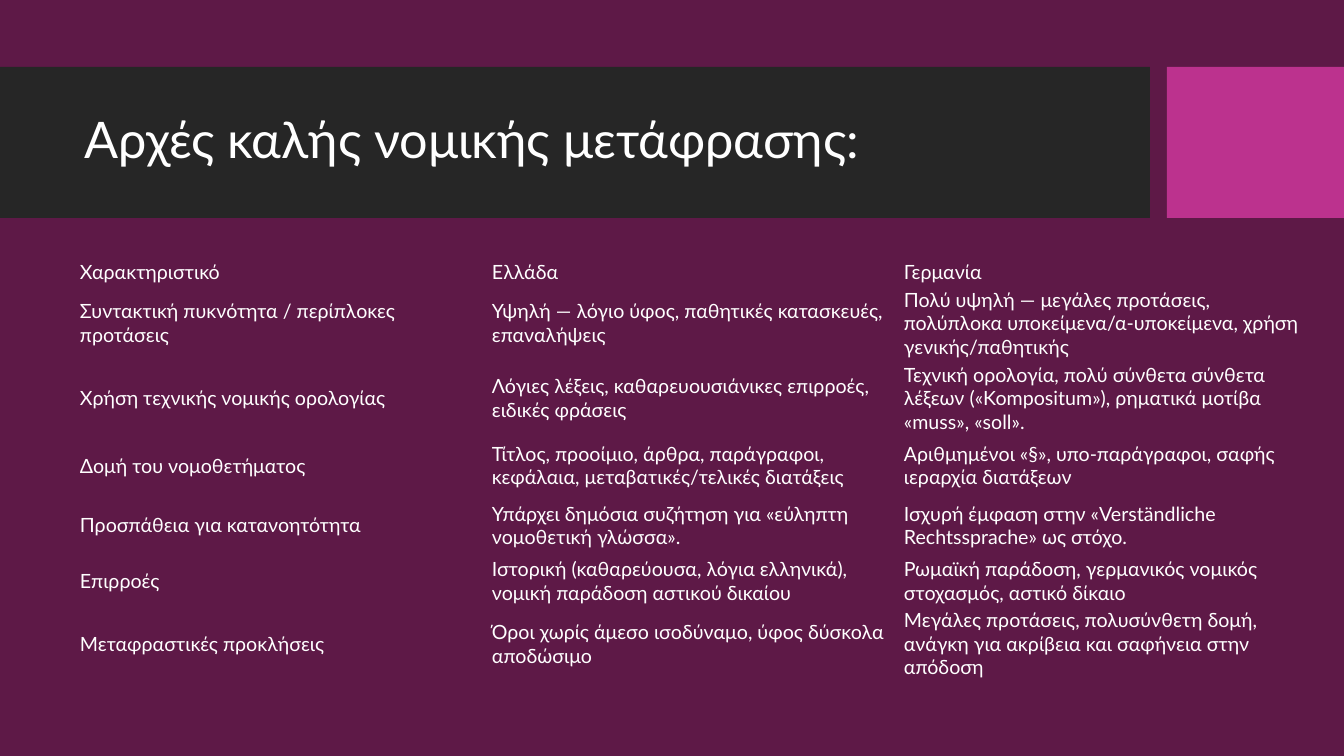
from pptx import Presentation
from pptx import util as u
from pptx.dml.color import RGBColor
from pptx.enum import shapes, text

PX = 914400 / 100.8
PLUM = RGBColor(0x5E, 0x19, 0x47)
CHARCOAL = RGBColor(0x26, 0x26, 0x26)
MAGENTA = RGBColor(0xBC, 0x32, 0x8E)
WHITE = RGBColor(0xFF, 0xFF, 0xFF)
FONT = "Lato"
NO_STYLE_NO_GRID = "{2D5ABB26-0587-4C30-8999-92F81FD0307C}"

COLUMN_WIDTH = 412
ROW_HEIGHTS = [19, 75, 75, 60, 60, 46, 60]
COMPARISON = [
    ("Χαρακτηριστικό", "Ελλάδα", "Γερμανία"),
    ("Συντακτική πυκνότητα / περίπλοκες προτάσεις",
     "Υψηλή — λόγιο ύφος, παθητικές κατασκευές, επαναλήψεις",
     "Πολύ υψηλή — μεγάλες προτάσεις, πολύπλοκα υποκείμενα/α-υποκείμενα, χρήση γενικής/παθητικής"),
    ("Χρήση τεχνικής νομικής ορολογίας",
     "Λόγιες λέξεις, καθαρευουσιάνικες επιρροές, ειδικές φράσεις",
     "Τεχνική ορολογία, πολύ σύνθετα σύνθετα λέξεων («Kompositum»), ρηματικά μοτίβα «muss», «soll»."),
    ("Δομή του νομοθετήματος",
     "Τίτλος, προοίμιο, άρθρα, παράγραφοι, κεφάλαια, μεταβατικές/τελικές διατάξεις",
     "Αριθμημένοι «§», υπο-παράγραφοι, σαφής ιεραρχία διατάξεων"),
    ("Προσπάθεια για κατανοητότητα",
     "Υπάρχει δημόσια συζήτηση για «εύληπτη νομοθετική γλώσσα».",
     "Ισχυρή έμφαση στην «Verständliche Rechtssprache» ως στόχο."),
    ("Επιρροές",
     "Ιστορική (καθαρεύουσα, λόγια ελληνικά), νομική παράδοση αστικού δικαίου",
     "Ρωμαϊκή παράδοση, γερμανικός νομικός στοχασμός, αστικό δίκαιο"),
    ("Μεταφραστικές προκλήσεις",
     "Όροι χωρίς άμεσο ισοδύναμο, ύφος δύσκολα αποδώσιμο",
     "Μεγάλες προτάσεις, πολυσύνθετη δομή, ανάγκη για ακρίβεια και σαφήνεια στην απόδοση"),
]


def px(length):
    """Turn pixels into EMU."""
    return u.Emu(round(length * PX))


def write(frame, words, size):
    """Fill a text frame with one white paragraph and return it."""
    frame.text = words
    paragraph = frame.paragraphs[0]
    for run in paragraph.runs:
        run.font.name = FONT
        run.font.size = u.Pt(size)
        run.font.color.rgb = WHITE
    return paragraph


def add_band(slide, left, top, width, height, color):
    """Draw a plain filled rectangle."""
    band = slide.shapes.add_shape(
        shapes.MSO_SHAPE.RECTANGLE, px(left), px(top), px(width), px(height))
    band.shadow.inherit = False
    band.fill.solid()
    band.fill.fore_color.rgb = color
    band.line.fill.background()


def add_title(slide, words):
    """Place the heading over the dark band."""
    title = slide.shapes.add_textbox(px(75), px(83), px(1059), px(119))
    frame = title.text_frame
    frame.word_wrap = True
    frame.vertical_anchor = text.MSO_ANCHOR.MIDDLE
    write(frame, words, 36).line_spacing = 0.9


def add_comparison(slide, rows):
    """Add the borderless comparison table."""
    frame = slide.shapes.add_table(
        len(rows), len(rows[0]), px(75), px(258),
        px(COLUMN_WIDTH * len(rows[0])), px(sum(ROW_HEIGHTS)))
    table = frame.table
    table.first_row = table.horz_banding = False
    table._tbl.tblPr.find("{*}tableStyleId").text = NO_STYLE_NO_GRID
    for column in table.columns:
        column.width = px(COLUMN_WIDTH)
    for row, height, entries in zip(table.rows, ROW_HEIGHTS, rows):
        row.height = px(height)
        for cell, entry in zip(row.cells, entries):
            cell.fill.background()
            cell.vertical_anchor = text.MSO_ANCHOR.MIDDLE
            cell.margin_left = cell.margin_right = px(5)
            cell.margin_top = cell.margin_bottom = px(2)
            write(cell.text_frame, entry, 14)


def main():
    """Build and save the slide."""
    deck = Presentation()
    deck.slide_width, deck.slide_height = px(1344), px(756)
    slide = deck.slides.add_slide(deck.slide_layouts[6])
    slide.background.fill.solid()
    slide.background.fill.fore_color.rgb = PLUM
    add_band(slide, 0, 67, 1150, 151, CHARCOAL)
    add_band(slide, 1167, 67, 177, 151, MAGENTA)
    add_title(slide, "Αρχές καλής νομικής μετάφρασης:")
    add_comparison(slide, COMPARISON)
    deck.save("out.pptx")


if __name__ == "__main__":
    main()
